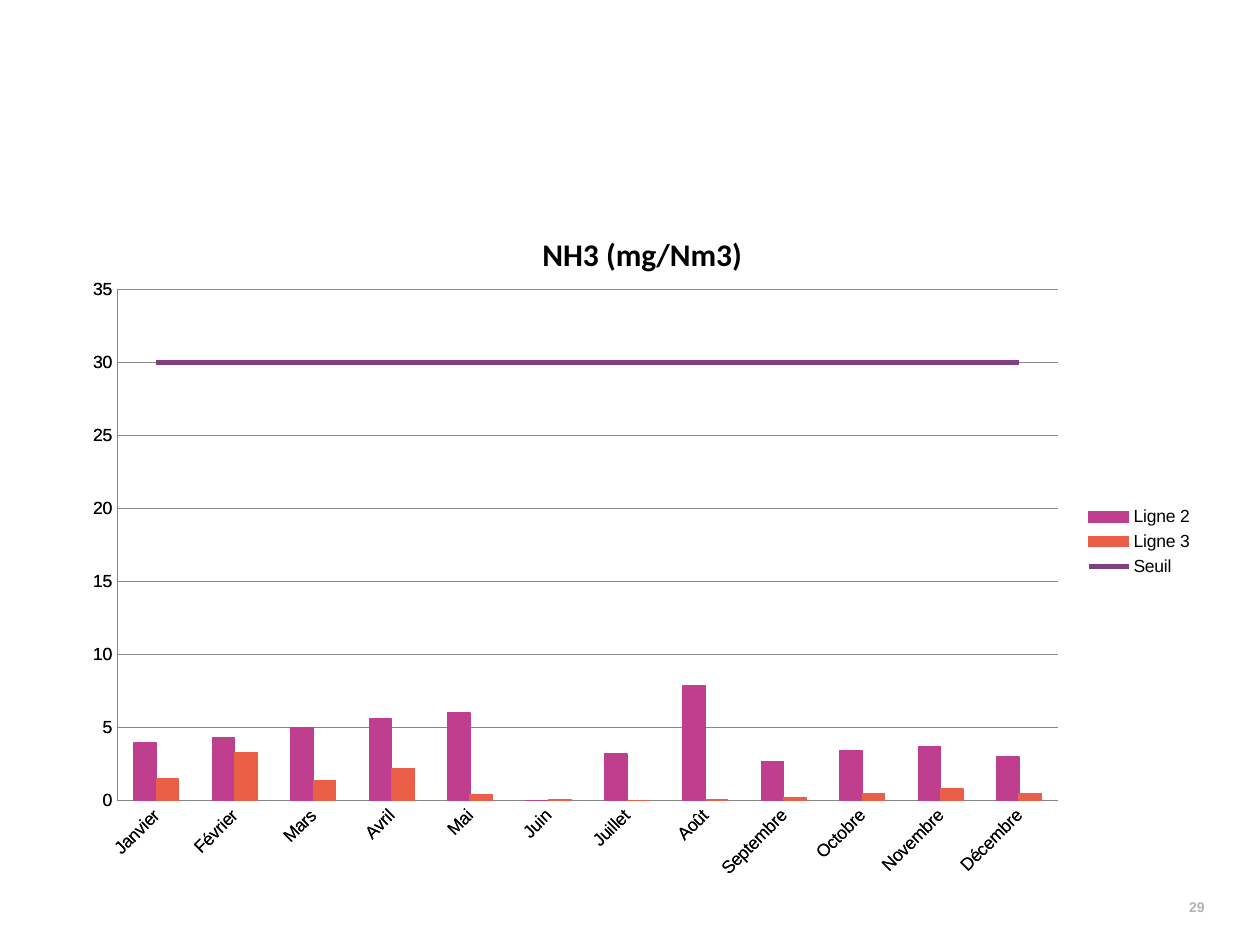
from copy import deepcopy
from dataclasses import dataclass

from lxml import etree
from pptx import Presentation
from pptx.chart.axis import CategoryAxis, ValueAxis
from pptx.chart.chart import Chart
from pptx.chart.data import CategoryChartData as ChartData
from pptx.dml.color import RGBColor as RGB
from pptx.enum.chart import XL_CHART_TYPE as ChartType
from pptx.enum.chart import XL_LEGEND_POSITION as LegendPos
from pptx.enum.chart import XL_MARKER_STYLE as Marker
from pptx.enum.chart import XL_TICK_MARK as Tick
from pptx.enum.text import MSO_ANCHOR as Anchor
from pptx.enum.text import PP_ALIGN as Align
from pptx.oxml import parse_xml
from pptx.oxml.ns import nsdecls, qn
from pptx.util import Inches, Pt

COLORS = {
    "text": "000000",
    "number": "B2B2B2",
    "axis": "878787",
    "plot": "FFFFFF",
    "ligne2": "C03E8E",
    "ligne3": "E95F47",
    "seuil": "804080",
}
MONTHS = ["Janvier", "Février", "Mars", "Avril", "Mai", "Juin", "Juillet",
          "Août", "Septembre", "Octobre", "Novembre", "Décembre"]


@dataclass
class Measure:
    name: str
    values: list[float]
    color: str
    width: float = 0.75


MEASURES = [
    Measure("Ligne 2", [4, 4.3, 5, 5.6, 6, 0, 3.2, 7.9, 2.7, 3.4, 3.7, 3], "ligne2"),
    Measure("Ligne 3", [1.5, 3.3, 1.4, 2.2, 0.4, 0.1, 0, 0.1, 0.2, 0.5, 0.8, 0.5], "ligne3"),
    Measure("Seuil", [30] * len(MONTHS), "seuil", 3),
]


def rgb(name: str) -> RGB:
    return RGB.from_string(COLORS[name])


def style_line(line, color: str, width: float = 0.75) -> None:
    line.color.rgb = rgb(color)
    line.width = Pt(width)


def style_axis(axis: CategoryAxis | ValueAxis) -> None:
    axis.major_tick_mark = axis.minor_tick_mark = Tick.NONE
    style_line(axis.format.line, "axis")


def set_layout(parent, index: int, **places: float) -> None:
    for old in parent.findall(qn("c:layout")):
        parent.remove(old)
    layout = etree.Element(qn("c:layout"))
    manual = etree.SubElement(layout, qn("c:manualLayout"))
    if "w" in places:
        etree.SubElement(manual, qn("c:layoutTarget"), val="inner")
    for mode in ("xMode", "yMode"):
        etree.SubElement(manual, qn(f"c:{mode}"), val="edge")
    for key, value in places.items():
        etree.SubElement(manual, qn(f"c:{key}"), val=str(value))
    parent.insert(index, layout)


def move_last_to_line(chart: Chart) -> None:
    area = chart._chartSpace.find(".//" + qn("c:plotArea"))
    bars = area.find(qn("c:barChart"))
    ser = bars.findall(qn("c:ser"))[-1]
    for flag in ser.findall(qn("c:invertIfNegative")):
        ser.remove(flag)
    line = parse_xml(
        f'<c:lineChart {nsdecls("c")}><c:grouping val="standard"/>'
        '<c:varyColors val="0"/><c:marker val="1"/>'
        '<c:axId val="101"/><c:axId val="102"/></c:lineChart>'
    )
    line.insert(2, ser)
    bars.addnext(line)
    cat, val = area.find(qn("c:catAx")), area.find(qn("c:valAx"))
    for axis, own, cross in ((val, "102", "101"), (cat, "101", "102")):
        second = deepcopy(axis)
        second.find(qn("c:axId")).set("val", own)
        second.find(qn("c:crossAx")).set("val", cross)
        val.addnext(second)


def add_nh3_chart(slide) -> None:
    data = ChartData()
    data.categories = MONTHS
    for m in MEASURES:
        data.add_series(m.name, m.values)
    chart = slide.shapes.add_chart(
        ChartType.COLUMN_CLUSTERED, Inches(0.57), Inches(1.52),
        Inches(9), Inches(5.56), data,
    ).chart
    chart.font.name = "Arial"
    chart.font.size = Pt(10)
    chart.font.color.rgb = rgb("text")

    chart.has_title = True
    tf = chart.chart_title.text_frame
    tf.text = "NH3 (mg/Nm3)"
    font = tf.paragraphs[0].runs[0].font
    font.name, font.size, font.bold = "Calibri", Pt(18), True
    font.color.rgb = rgb("text")
    title = chart._chartSpace.find(".//" + qn("c:title"))
    set_layout(title, 1, x=0.41, y=0.05)
    for overlay in title.findall(qn("c:overlay")):
        title.remove(overlay)
    title[1].addnext(parse_xml(f'<c:overlay {nsdecls("c")} val="1"/>'))

    chart.has_legend = True
    chart.legend.position = LegendPos.RIGHT
    chart.legend.include_in_layout = False

    style_axis(chart.category_axis)
    chart.category_axis.tick_labels.font.size = Pt(10)
    body = chart.category_axis._element.find(qn("c:txPr")).find(qn("a:bodyPr"))
    body.set("rot", "-2700000")
    body.set("vert", "horz")
    axis = chart.value_axis
    style_axis(axis)
    axis.minimum_scale, axis.maximum_scale, axis.major_unit = 0, 35, 5
    axis.tick_labels.number_format = "0"
    axis.tick_labels.number_format_is_linked = False
    axis.has_major_gridlines = True
    style_line(axis.major_gridlines.format.line, "axis")

    plot = chart.plots[0]
    plot.gap_width, plot.overlap, plot.vary_by_categories = 150, 0, False
    for s, m in zip(plot.series, MEASURES):
        style_line(s.format.line, m.color, m.width)
    for s, m in zip(list(plot.series)[:-1], MEASURES):
        s.format.fill.solid()
        s.format.fill.fore_color.rgb = rgb(m.color)

    move_last_to_line(chart)
    seuil = chart.plots[1].series[0]
    seuil.marker.style = Marker.NONE
    seuil.smooth = True

    area = chart._chartSpace.find(".//" + qn("c:plotArea"))
    set_layout(area, 0, x=0.04, y=0.14, w=0.83, h=0.73)
    area.append(parse_xml(
        f'<c:spPr {nsdecls("c", "a")}><a:solidFill>'
        f'<a:srgbClr val="{COLORS["plot"]}"/></a:solidFill></c:spPr>'
    ))


def add_slide_number(slide) -> None:
    tf = slide.shapes.add_textbox(
        Inches(7.33), Inches(7), Inches(2.33), Inches(0.4)
    ).text_frame
    tf.word_wrap = True
    tf.vertical_anchor = Anchor.MIDDLE
    tf.text = "29"
    p = tf.paragraphs[0]
    p.alignment = Align.RIGHT
    font = p.runs[0].font
    font.name, font.size, font.bold = "Arial", Pt(8), True
    font.color.rgb = rgb("number")


def main() -> None:
    prs = Presentation()
    prs.slide_width, prs.slide_height = Inches(10), Inches(7.5)
    slide = prs.slides.add_slide(prs.slide_layouts[6])
    add_slide_number(slide)
    add_nh3_chart(slide)
    prs.save("out.pptx")


if __name__ == "__main__":
    main()
